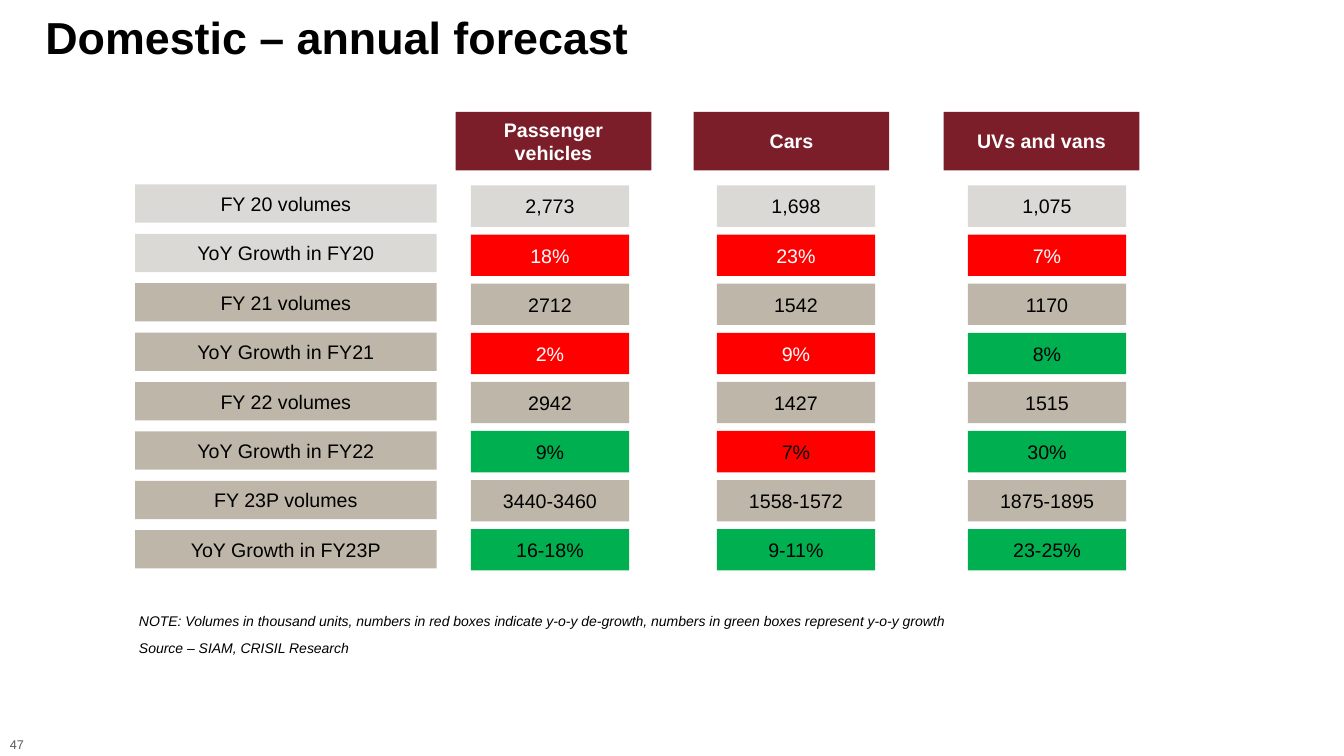
from dataclasses import dataclass

from pptx import Presentation, util as u
from pptx.dml.color import RGBColor
from pptx.enum import shapes, text


@dataclass(frozen=True)
class Theme:
    font: str = "Arial"
    black: str = "000000"
    white: str = "FFFFFF"
    page_grey: str = "595959"
    maroon: str = "7B1E29"
    silver: str = "DBD9D6"
    taupe: str = "BEB7A9"
    red: str = "FF0000"
    green: str = "00B050"
    title_size: int = 32
    cell_size: int = 14
    note_size: int = 10
    page_size: int = 9


@dataclass(frozen=True)
class Column:
    left: float
    width: float


@dataclass(frozen=True)
class Rows:
    first: float
    last: float
    height: float

    def top(self, index: int) -> float:
        return self.first + index * (self.last - self.first) / (len(FORECAST) - 1)


@dataclass(frozen=True)
class Segment:
    name: str
    header: Column
    values: Column


@dataclass(frozen=True)
class Cell:
    label: str
    fill: str
    ink: str


@dataclass(frozen=True)
class Period:
    label: str
    fill: str
    cells: tuple[Cell, ...]


@dataclass(frozen=True)
class Note:
    label: str
    column: Column
    top: float
    height: float
    size: int
    ink: str
    italic: bool = True
    wrap: bool = True


THEME = Theme()


def volumes(label: str, fill: str, *figures: str) -> Period:
    return Period(label, fill, tuple(Cell(f, fill, THEME.black) for f in figures))


def growth(label: str, fill: str, *cells: Cell) -> Period:
    return Period(label, fill, cells)


def up(label: str) -> Cell:
    return Cell(label, THEME.green, THEME.black)


def down(label: str, ink: str = THEME.white) -> Cell:
    return Cell(label, THEME.red, ink)


# Forecast content
FORECAST = (
    volumes("FY 20 volumes", THEME.silver, "2,773", "1,698", "1,075"),
    growth("YoY Growth in FY20", THEME.silver, down("18%"), down("23%"), down("7%")),
    volumes("FY 21 volumes", THEME.taupe, "2712", "1542", "1170"),
    growth("YoY Growth in FY21", THEME.taupe, down("2%"), down("9%"), up("8%")),
    volumes("FY 22 volumes", THEME.taupe, "2942", "1427", "1515"),
    growth("YoY Growth in FY22", THEME.taupe, up("9%"), down("7%", THEME.black), up("30%")),
    volumes("FY 23P volumes", THEME.taupe, "3440-3460", "1558-1572", "1875-1895"),
    growth("YoY Growth in FY23P", THEME.taupe, up("16-18%"), up("9-11%"), up("23-25%")),
)

# Grid, in inches
LABELS = Column(1.34, 2.99)
LABEL_ROWS = Rows(1.83, 5.26, 0.38)
VALUE_ROWS = Rows(1.84, 5.25, 0.41)
HEADER_TOP, HEADER_HEIGHT = 1.11, 0.58
SEGMENTS = (
    Segment("Passenger vehicles", Column(4.52, 1.94), Column(4.67, 1.57)),
    Segment("Cars", Column(6.88, 1.94), Column(7.11, 1.57)),
    Segment("UVs and vans", Column(9.36, 1.94), Column(9.6, 1.57)),
)
NOTES = (
    Note("NOTE: Volumes in thousand units, numbers in red boxes indicate y-o-y de-growth, "
         "numbers in green boxes represent y-o-y growth",
         Column(1.28, 8.45), 6.03, 0.27, THEME.note_size, THEME.black),
    Note("Source – SIAM, CRISIL Research",
         Column(1.28, 2.99), 6.3, 0.27, THEME.note_size, THEME.black),
    Note("47", Column(0, 0.36), 7.26, 0.26, THEME.page_size, THEME.page_grey,
         italic=False, wrap=False),
)


def set_font(para, size: int, ink: str, bold: bool = False, italic: bool = False) -> None:
    font = para.font
    font.name, font.size = THEME.font, u.Pt(size)
    font.bold, font.italic = bold, italic
    font.color.rgb = RGBColor.from_string(ink)


def frame(column: Column, top: float, height: float) -> tuple[u.Length, ...]:
    return tuple(u.Inches(n) for n in (column.left, top, column.width, height))


def add_cell(page, column: Column, top: float, height: float, cell: Cell,
             bold: bool = False) -> None:
    box = page.shapes.add_shape(shapes.MSO_SHAPE.RECTANGLE, *frame(column, top, height))
    box.shadow.inherit = False
    box.fill.solid()
    box.fill.fore_color.rgb = RGBColor.from_string(cell.fill)
    box.line.fill.background()
    body = box.text_frame
    body.text = cell.label
    body.word_wrap = True
    body.vertical_anchor = text.MSO_ANCHOR.MIDDLE
    para = body.paragraphs[0]
    para.alignment = text.PP_ALIGN.CENTER
    set_font(para, THEME.cell_size, cell.ink, bold=bold)


def add_note(page, note: Note) -> None:
    box = page.shapes.add_textbox(*frame(note.column, note.top, note.height))
    body = box.text_frame
    body.text = note.label
    body.word_wrap = note.wrap
    body.auto_size = text.MSO_AUTO_SIZE.SHAPE_TO_FIT_TEXT
    set_font(body.paragraphs[0], note.size, note.ink, italic=note.italic)


def set_title(page, label: str) -> None:
    title = page.shapes.title
    title.left, title.top, title.width, title.height = frame(Column(0.45, 12.69), 0.12, 0.55)
    body = title.text_frame
    body.text = label
    body.margin_left = body.margin_right = body.margin_top = body.margin_bottom = 0
    body.vertical_anchor = text.MSO_ANCHOR.MIDDLE
    body.auto_size = text.MSO_AUTO_SIZE.NONE
    para = body.paragraphs[0]
    para.alignment = text.PP_ALIGN.LEFT
    para.line_spacing = 0.9
    set_font(para, THEME.title_size, THEME.black, bold=True)


def main() -> None:
    deck = Presentation()
    deck.slide_width, deck.slide_height = u.Inches(13.33), u.Inches(7.5)
    page = deck.slides.add_slide(deck.slide_layouts.get_by_name("Title Only"))
    set_title(page, "Domestic – annual forecast")

    # Segment headers
    for segment in SEGMENTS:
        add_cell(page, segment.header, HEADER_TOP, HEADER_HEIGHT,
                 Cell(segment.name, THEME.maroon, THEME.white), bold=True)

    # Row labels and figures
    for index, period in enumerate(FORECAST):
        add_cell(page, LABELS, LABEL_ROWS.top(index), LABEL_ROWS.height,
                 Cell(period.label, period.fill, THEME.black))
        for segment, cell in zip(SEGMENTS, period.cells):
            add_cell(page, segment.values, VALUE_ROWS.top(index), VALUE_ROWS.height, cell)

    # Notes and page number
    for note in NOTES:
        add_note(page, note)

    deck.save("out.pptx")


if __name__ == "__main__":
    main()
